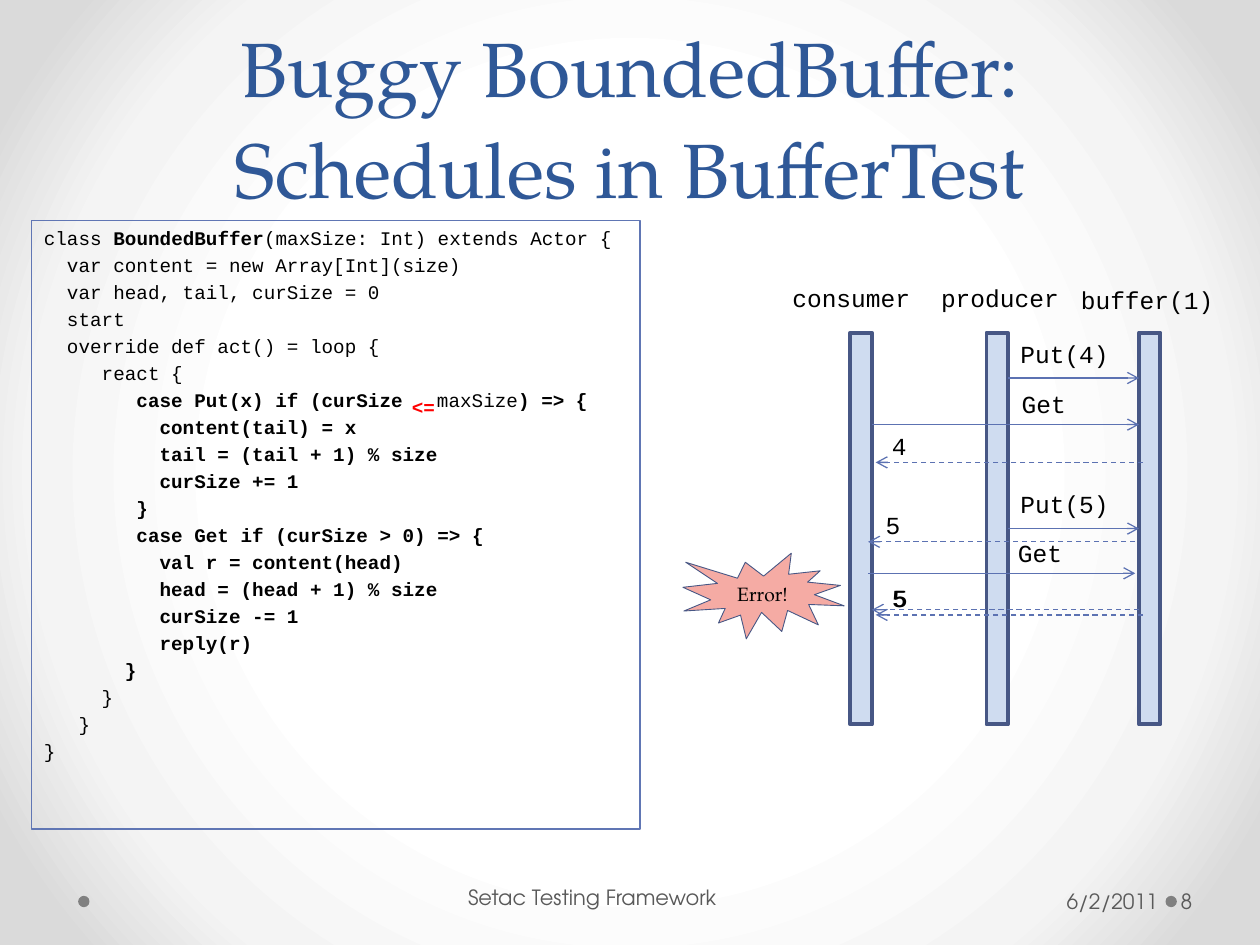
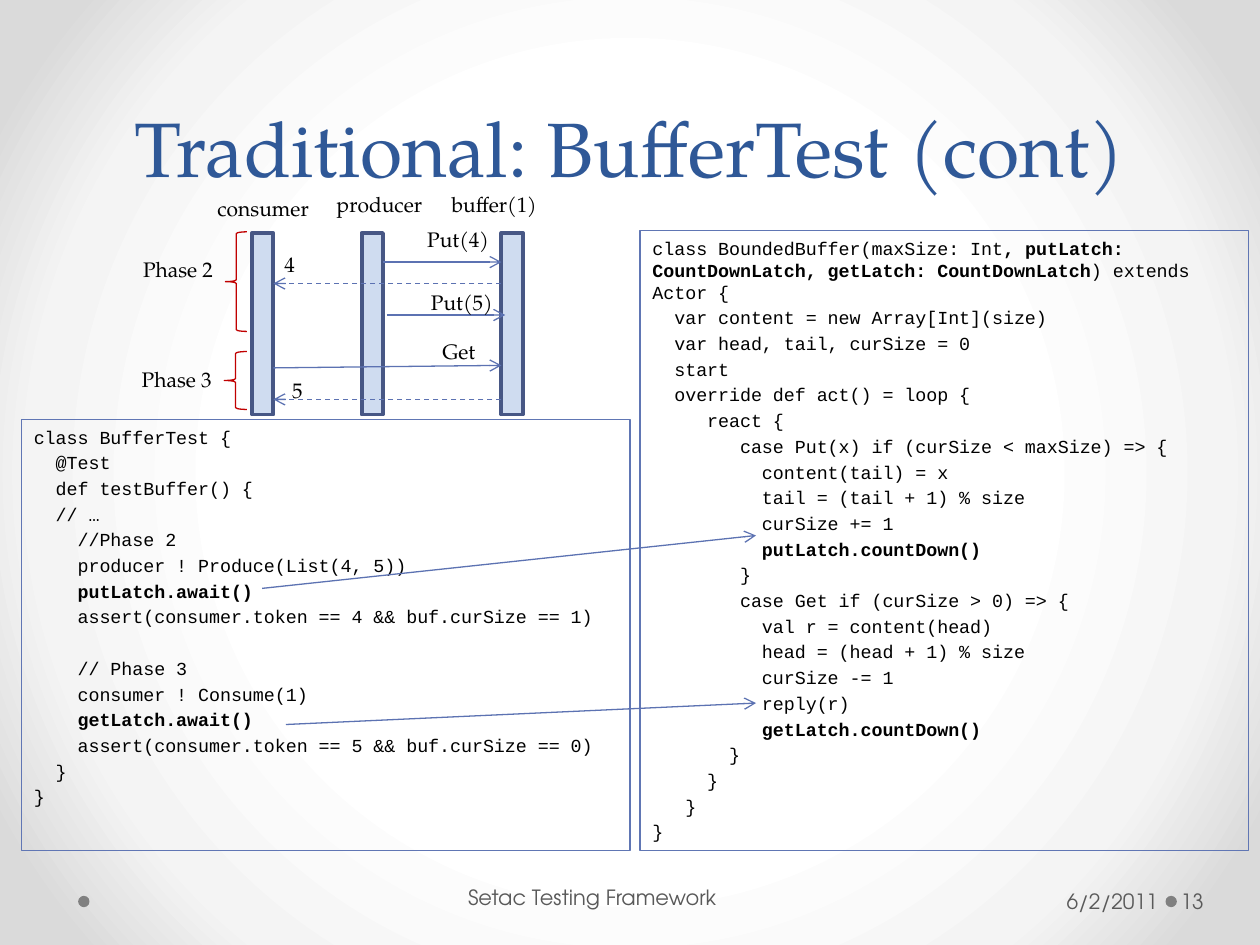
"""Build two slides on testing a bounded buffer: code panels and message charts."""
from lxml.etree import SubElement
from pptx import Presentation
from pptx.dml.color import RGBColor
from pptx.enum.dml import MSO_LINE
from pptx.enum.shapes import MSO_CONNECTOR, MSO_SHAPE
from pptx.enum.text import MSO_ANCHOR, PP_ALIGN
from pptx.oxml import parse_xml
from pptx.oxml.ns import nsdecls, qn
from pptx.util import Inches, Pt

CODE_FONT, BODY_FONT, FOOTER_FONT = "Courier New", "TeX Gyre Pagella", "TeX Gyre Adventor"
BLACK, BLUE, GREY, DOT, RED = "000000", "2F5897", "595959", "808080", "FF0000"
PANEL, ARROW, BAR, BAR_EDGE, BRACE, SEAL = "6076B4", "5C72B2", "CFDCF0", "475785", "C00000", "EF796D"
BACKDROP = [(50, "FFFFFF"), (76, "F4F4F4"), (92, "DADADA")]
BAR_WIDTH = 0.17
CONSUMER, PRODUCER, BUFFER = range(3)
PLAIN_INSETS = (0.1, 0.05, 0.1, 0.05)

BUGGY_BUFFER = """class |BoundedBuffer|(maxSize: Int) extends Actor {
  var content = new Array[Int](size)
  var head, tail, curSize = 0
  start
  override def act() = loop {
     react {
|        case Put(x) if (curSize\t|maxSize|) => {
|          content(tail) = x
|          tail = (tail + 1) % size
|          curSize += 1
|        }
|        case Get if (curSize > 0) => {
|          val r = content(head)
|          head = (head + 1) % size
|          curSize -= 1
|          reply(r)
|       }
     }
   }
}"""

BUFFER_TEST = """class BufferTest {
  @Test
  def testBuffer() {
  // …
    //Phase 2
    producer ! Produce(List(4, 5))
|    putLatch.await()
    assert(consumer.token == 4 && buf.curSize == 1)

    // Phase 3
    consumer ! Consume(1)
|    getLatch.await()
    assert(consumer.token == 5 && buf.curSize == 0)
  }
}"""

LATCHED_BUFFER = """class BoundedBuffer(maxSize: Int|, putLatch: CountDownLatch, getLatch: CountDownLatch|) extends Actor {
  var content = new Array[Int](size)
  var head, tail, curSize = 0
  start
  override def act() = loop {
     react {
        case Put(x) if (curSize < maxSize) => {
          content(tail) = x
          tail = (tail + 1) % size
          curSize += 1
|          putLatch.countDown()
        }
        case Get if (curSize > 0) => {
          val r = content(head)
          head = (head + 1) % size
          curSize -= 1
          reply(r)
|          getLatch.countDown()
       }
     }
   }
}"""

SCHEDULE = {
    "bars": (6.75, 7.83, 9.04), "top": 2.64, "height": 3.11,
    "font": CODE_FONT, "size": 14, "align": PP_ALIGN.LEFT,
    "names": [("consumer", 6.19, 2.2, 1.28), ("producer", 7.37, 2.2, 1.28),
              ("buffer(1)", 8.48, 2.21, 1.28)],
    "messages": [
        (PRODUCER, BUFFER, 3, 3, 0, "Put(4)", 8, 2.64, 1.28),
        (CONSUMER, BUFFER, 3.37, 3.37, 0, "Get", 8.01, 3.04, 1.28),
        (PRODUCER, BUFFER, 4.2, 4.2, 0, "Put(5)", 8, 3.83, 1.28),
        (CONSUMER, BUFFER, 4.55, 4.55, -0.03, "Get", 7.98, 4.22, 1.28),
        (BUFFER, CONSUMER, 4.84, 4.84, 0, "5", 6.99, 4.58, 1.28),
        (BUFFER, CONSUMER, 3.67, 3.67, 0.03, "4", 6.98, 3.37, 0.94),
        (BUFFER, CONSUMER, 4.88, 4.88, 0.03, "5", 6.98, 4.58, 0.94),
        (BUFFER, CONSUMER, 4.3, 4.3, -0.03, "5", 6.93, 4, 0.94)],
}
PHASES = {
    "bars": (2, 2.87, 3.98), "top": 1.85, "height": 1.44,
    "font": BODY_FONT, "size": 12, "align": PP_ALIGN.RIGHT,
    "names": [("consumer", 1.36, 1.5, 1.19), ("producer", 2.45, 1.47, 1),
              ("buffer(1)", 3.36, 1.47, 1), ("Phase 2", 0.79, 1.99, 1), ("Phase 3", 0.78, 2.86, 1)],
    "messages": [
        (PRODUCER, BUFFER, 2.08, 2.08, 0, "Put(4)", 2.98, 1.75, 1),
        (BUFFER, CONSUMER, 2.25, 2.25, 0, "4", 2.08, 1.95, 0.36),
        (PRODUCER, BUFFER, 2.5, 2.5, 0.03, "Put(5)", 3.25, 2.25, 0.76),
        (CONSUMER, BUFFER, 2.92, 2.9, 0, "Get", 2.87, 2.64, 1),
        (BUFFER, CONSUMER, 3.17, 3.17, 0, "5", 2.14, 2.95, 0.36)],
}
SLIDES = [
    {"title": "Buggy BoundedBuffer: Schedules in BufferTest", "title_height": 1.75, "number": "8",
     "panels": [(BUGGY_BUFFER, 11, (0.25, 1.75, 4.83, 4.83))], "links": [],
     "chart": SCHEDULE, "braces": [], "operator": (3.17, 3.09, 0.42, 0.29),
     "error": (5.42, 4.39, 1.28, 0.68)},
    {"title": "Traditional: BufferTest (cont)", "title_height": 1.58, "number": "13",
     "panels": [(BUFFER_TEST, 10.5, (0.17, 3.33, 4.83, 3.42)),
                (LATCHED_BUFFER, 10.5, (5.08, 1.83, 4.83, 4.92))],
     "links": [(2.08, 4.67, 6, 4.25), (2.27, 5.75, 6, 5.58)],
     "chart": PHASES, "braces": [(1.79, 1.84, 0.17, 0.79), (1.78, 2.79, 0.18, 0.46)]},
]


def colour(code):
    return RGBColor.from_string(code)


def inches(lengths):
    return [Inches(length) for length in lengths]


def add_span(para, text, font, size, code, bold=False):
    span = para.add_run()
    span.text = text
    span.font.name, span.font.size, span.font.bold = font, Pt(size), bold
    span.font.color.rgb = colour(code)


def set_frame(shape, anchor=MSO_ANCHOR.TOP, insets=PLAIN_INSETS):
    frame = shape.text_frame
    frame.word_wrap, frame.vertical_anchor = True, anchor
    frame.margin_left, frame.margin_top, frame.margin_right, frame.margin_bottom = inches(insets)
    return frame


def add_text(page, place, text, font, size, code=BLACK, align=PP_ALIGN.LEFT,
             anchor=MSO_ANCHOR.TOP, insets=PLAIN_INSETS, bold=False):
    para = set_frame(page.shapes.add_textbox(*inches(place)), anchor, insets).paragraphs[0]
    para.alignment = align
    add_span(para, text, font, size, code, bold)
    return para


def add_figure(page, kind, place, fill=None, edge=None, width=0.75):
    shape = page.shapes.add_shape(kind, *inches(place))
    shape.shadow.inherit = False
    if fill:
        shape.fill.solid()
        shape.fill.fore_color.rgb = colour(fill)
    else:
        shape.fill.background()
    if edge:
        shape.line.color.rgb, shape.line.width = colour(edge), Pt(width)
    else:
        shape.line.fill.background()
    return shape


def add_arrow(page, ends, dashed=False):
    arrow = page.shapes.add_connector(MSO_CONNECTOR.STRAIGHT, *inches(ends))
    arrow.line.color.rgb, arrow.line.width = colour(ARROW), Pt(0.75)
    if dashed:
        arrow.line.dash_style = MSO_LINE.DASH
    SubElement(arrow.element.find(".//" + qn("a:ln")), qn("a:tailEnd"), type="arrow")
    SubElement(arrow.element.spPr, qn("a:effectLst"))
    return arrow


def add_panel(page, code, size, place):
    frame = set_frame(add_figure(page, MSO_SHAPE.RECTANGLE, place, edge=PANEL))
    gap, extra = 0.2 * size, 0
    para = None
    for line in code.split("\n"):
        if not line:
            extra = 1.4 * size
            continue
        if para is None:
            para = frame.paragraphs[0]
        else:
            para = frame.add_paragraph()
            para.space_before = Pt(gap + extra)
        extra = 0
        para.alignment = PP_ALIGN.LEFT
        if "\t" in line:
            tabs = SubElement(para._p.get_or_add_pPr(), qn("a:tabLst"))
            SubElement(tabs, qn("a:tab"), pos=str(Inches(3.12)), algn="l")
        for index, text in enumerate(line.split("|")):
            if text:
                add_span(para, text, CODE_FONT, size, BLACK, index % 2 == 1)


def add_chart_of_messages(page, chart):
    lefts, top, height = chart["bars"], chart["top"], chart["height"]
    style = {"font": chart["font"], "size": chart["size"], "align": chart["align"]}
    label_height = 0.34 if chart["size"] == 14 else 0.3
    bars = [add_figure(page, MSO_SHAPE.RECTANGLE, (left, top, BAR_WIDTH, height), BAR, BAR_EDGE, 2.25)
            for left in lefts]
    for text, left, label_top, width in chart["names"]:
        add_text(page, (left, label_top, width, label_height), text, **style)
    for sender, receiver, start, end, nudge, text, left, label_top, width in chart["messages"]:
        reply = receiver == CONSUMER
        begin_x = lefts[sender] + (0 if reply else BAR_WIDTH) + nudge
        end_x = lefts[receiver] + (BAR_WIDTH if reply else 0) + nudge
        arrow = add_arrow(page, (begin_x, start, end_x, end), reply)
        if abs(start - top - height / 2) < 0.02:
            arrow.begin_connect(bars[sender], 1 if reply else 3)
            arrow.end_connect(bars[receiver], 3 if reply else 1)
        add_text(page, (left, label_top, width, label_height), text, **style)


def add_error(page, place):
    seal = add_figure(page, MSO_SHAPE.EXPLOSION1, place, SEAL, BAR_EDGE, 0.5)
    SubElement(seal.element.spPr.find(".//" + qn("a:srgbClr")), qn("a:alpha"), val="62000")
    para = set_frame(seal, MSO_ANCHOR.MIDDLE).paragraphs[0]
    para.alignment = PP_ALIGN.CENTER
    add_span(para, "Error!", BODY_FONT, 11, BLACK)


def add_base(page, content):
    stops = "".join(f'<a:gs pos="{share * 1000}"><a:srgbClr val="{code}"/></a:gs>' for share, code in BACKDROP)
    page.element.cSld.insert(0, parse_xml(
        f'<p:bg {nsdecls("p", "a")}><p:bgPr><a:gradFill><a:gsLst>{stops}</a:gsLst><a:path path="circle">'
        '<a:fillToRect l="50000" t="50000" r="50000" b="50000"/></a:path></a:gradFill>'
        '<a:effectLst/></p:bgPr></p:bg>'))
    for left in (9.25, 0.62):
        add_figure(page, MSO_SHAPE.OVAL, (left, 7.11, 0.09, 0.09), DOT)
    title = add_text(page, (0.5, 0, 9, content["title_height"]), content["title"], BODY_FONT, 44,
                     BLUE, PP_ALIGN.CENTER, MSO_ANCHOR.BOTTOM)
    title.line_spacing = Pt(58)
    for text, place, align, left, right in [
            ("6/2/2011", (6.96, 6.95, 2.28, 0.4), PP_ALIGN.RIGHT, 0.1, 0.05),
            ("Setac Testing Framework", (3.17, 6.92, 3.11, 0.4), PP_ALIGN.CENTER, 0.05, 0.1),
            (content["number"], (9.34, 6.95, 0.61, 0.4), PP_ALIGN.LEFT, 0.03, 0.05)]:
        add_text(page, place, text, FOOTER_FONT, 12, GREY, align, MSO_ANCHOR.MIDDLE, (left, 0.05, right, 0.05))


def main():
    deck = Presentation()
    deck.slide_width, deck.slide_height = Inches(10), Inches(7.5)
    for content in SLIDES:
        page = deck.slides.add_slide(deck.slide_layouts[6])
        add_base(page, content)
        for panel in content["panels"]:
            add_panel(page, *panel)
        for ends in content["links"]:
            add_arrow(page, ends)
        add_chart_of_messages(page, content["chart"])
        for place in content["braces"]:
            add_figure(page, MSO_SHAPE.LEFT_BRACE, place, edge=BRACE)
        if "operator" in content:
            add_text(page, content["operator"], "<=", CODE_FONT, 11, RED, bold=True)
        if "error" in content:
            add_error(page, content["error"])
    deck.save("out.pptx")


if __name__ == "__main__":
    main()
